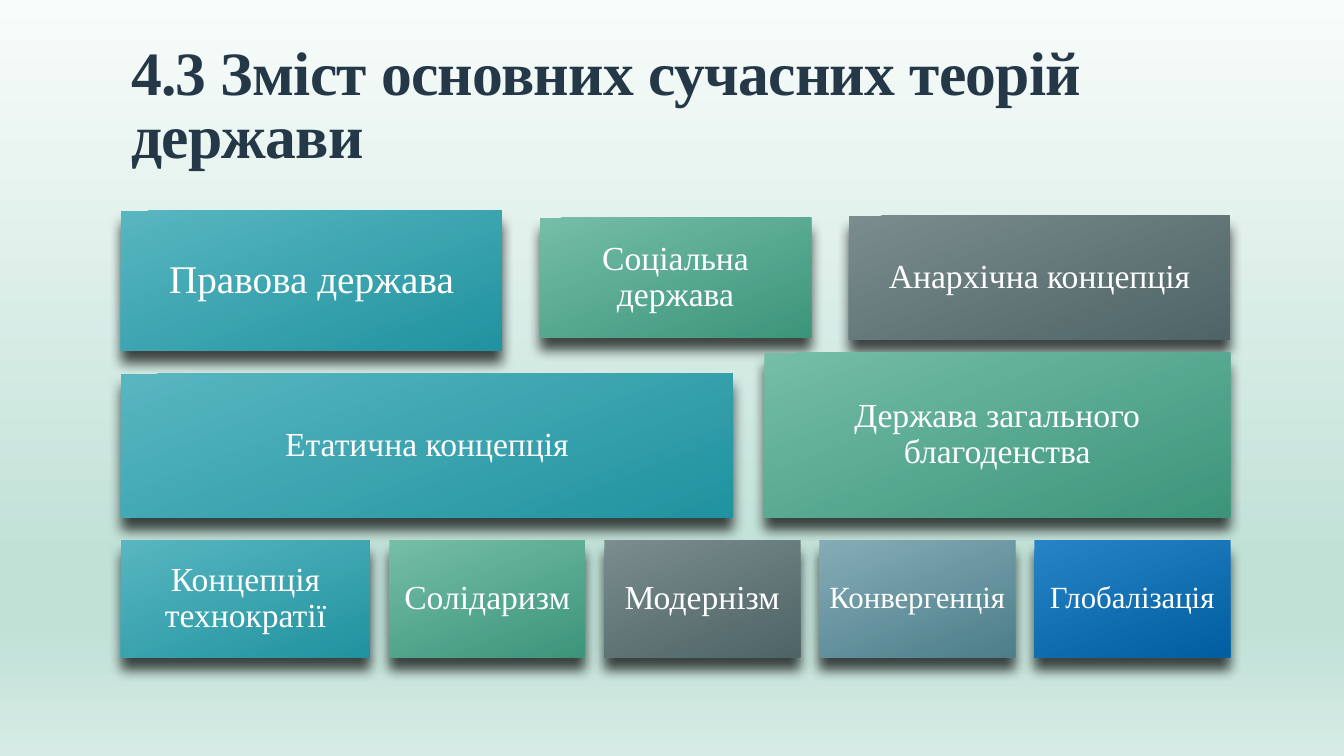
"""Build a slide with a mosaic of modern theories of the state."""
from lxml.etree import SubElement
from pptx import Presentation
from pptx.dml.color import RGBColor
from pptx.enum.shapes import MSO_SHAPE
from pptx.enum.text import MSO_ANCHOR, PP_ALIGN
from pptx.oxml.ns import qn
from pptx.util import Inches, Pt

HEADING = "4.3 Зміст основних сучасних теорій держави"
FONT = "Times New Roman"
COLORS = {"heading": "253848", "label": "FFFFFF", "shadow": "000000"}
BACKDROP = [(0, "F8FCFB"), (74, "C1E1D7"), (83, "C1E1D7"), (100, "D6EBE5")]
TONES = {
    "teal": ("58B6C0", "2093A0"),
    "green": ("75BDA7", "3C957A"),
    "grey": ("7A8C8E", "4E6466"),
    "steel": ("84ACB6", "4D7E8A"),
    "blue": ("2683C6", "005EA1"),
}
# label, tone, width in % of the band, top and height in % of the slide, text size
ROWS = [
    [("Правова держава", "teal", 34.36, 27.87, 18.53, 28),
     ("Соціальна держава", "green", 24.45, 28.8, 15.87, 24),
     ("Анархічна концепція", "grey", 34.36, 28.53, 16.4, 24)],
    [("Етатична концепція", "teal", 55.18, 49.47, 18.93, 24),
     ("Держава загального благоденства", "green", 42, 46.67, 21.73, 24)],
    [("Концепція технократії", "teal", 22.45, 71.47, 15.47, 24),
     ("Солідаризм", "green", 17.64, 71.47, 15.47, 24),
     ("Модернізм", "grey", 17.64, 71.47, 15.47, 24),
     ("Конвергенція", "steel", 17.64, 71.47, 15.47, 22),
     ("Глобалізація", "blue", 17.64, 71.47, 15.47, 22)],
]
SLIDE_W, SLIDE_H = 13.33, 7.5
BAND_LEFT, BAND_W = 1.2, 11


def paint(fill, owner, stops, angle):
    fill.gradient()
    fill.gradient_angle = 360 - angle
    stop_list = next(owner.iter(qn("a:gsLst")))
    for old in list(stop_list):
        stop_list.remove(old)
    for position, color in stops:
        stop = SubElement(stop_list, qn("a:gs"), pos=str(position * 1000))
        SubElement(stop, qn("a:srgbClr"), val=color)


def cast_shadow(tile):
    effects = SubElement(tile.element.spPr, qn("a:effectLst"))
    shadow = SubElement(effects, qn("a:outerShdw"), blurRad=str(Pt(9)), dist=str(Pt(9)),
                        dir="5400000", algn="ctr", rotWithShape="0")
    color = SubElement(shadow, qn("a:srgbClr"), val=COLORS["shadow"])
    SubElement(color, qn("a:alpha"), val="70000")


def write(frame, text, *, size, color, align, anchor, line, bold=False, tracking=0):
    frame.word_wrap = True
    frame.vertical_anchor = anchor
    paragraph = frame.paragraphs[0]
    paragraph.alignment = align
    paragraph.line_spacing = line
    run = paragraph.add_run()
    run.text = text
    run.font.name, run.font.size, run.font.bold = FONT, Pt(size), bold
    run.font.color.rgb = RGBColor.from_string(color)
    if tracking:
        run.font._element.set("spc", str(tracking))


def add_tile(slide, label, tone, left, top, width, height, size):
    tile = slide.shapes.add_shape(MSO_SHAPE.RECTANGLE, Inches(left), Inches(top),
                                  Inches(width), Inches(height))
    start, end = TONES[tone]
    paint(tile.fill, tile.element, [(0, start), (100, end)], 69)
    tile.line.fill.background()
    cast_shadow(tile)
    frame = tile.text_frame
    inset = Pt(size * 0.3)
    frame.margin_left = frame.margin_right = frame.margin_top = frame.margin_bottom = inset
    write(frame, label, size=size, color=COLORS["label"], align=PP_ALIGN.CENTER,
          anchor=MSO_ANCHOR.MIDDLE, line=0.9)


def main():
    deck = Presentation()
    deck.slide_width, deck.slide_height = Inches(SLIDE_W), Inches(SLIDE_H)
    slide = deck.slides.add_slide(deck.slide_layouts[5])
    paint(slide.background.fill, slide.element, BACKDROP, 90)

    heading = slide.shapes.title
    heading.left, heading.top = Inches(BAND_LEFT), Inches(0.16)
    heading.width, heading.height = Inches(BAND_W), Inches(1.59)
    write(heading.text_frame, HEADING, size=44, color=COLORS["heading"], align=PP_ALIGN.LEFT,
          anchor=MSO_ANCHOR.BOTTOM, line=0.85, bold=True, tracking=-50)

    for row in ROWS:
        gap = (100 - sum(tile[2] for tile in row)) / (len(row) - 1)
        offset = 0
        for label, tone, width, top, height, size in row:
            add_tile(slide, label, tone, BAND_LEFT + BAND_W * offset / 100, SLIDE_H * top / 100,
                     BAND_W * width / 100, SLIDE_H * height / 100, size)
            offset += width + gap
    deck.save("out.pptx")


if __name__ == "__main__":
    main()
